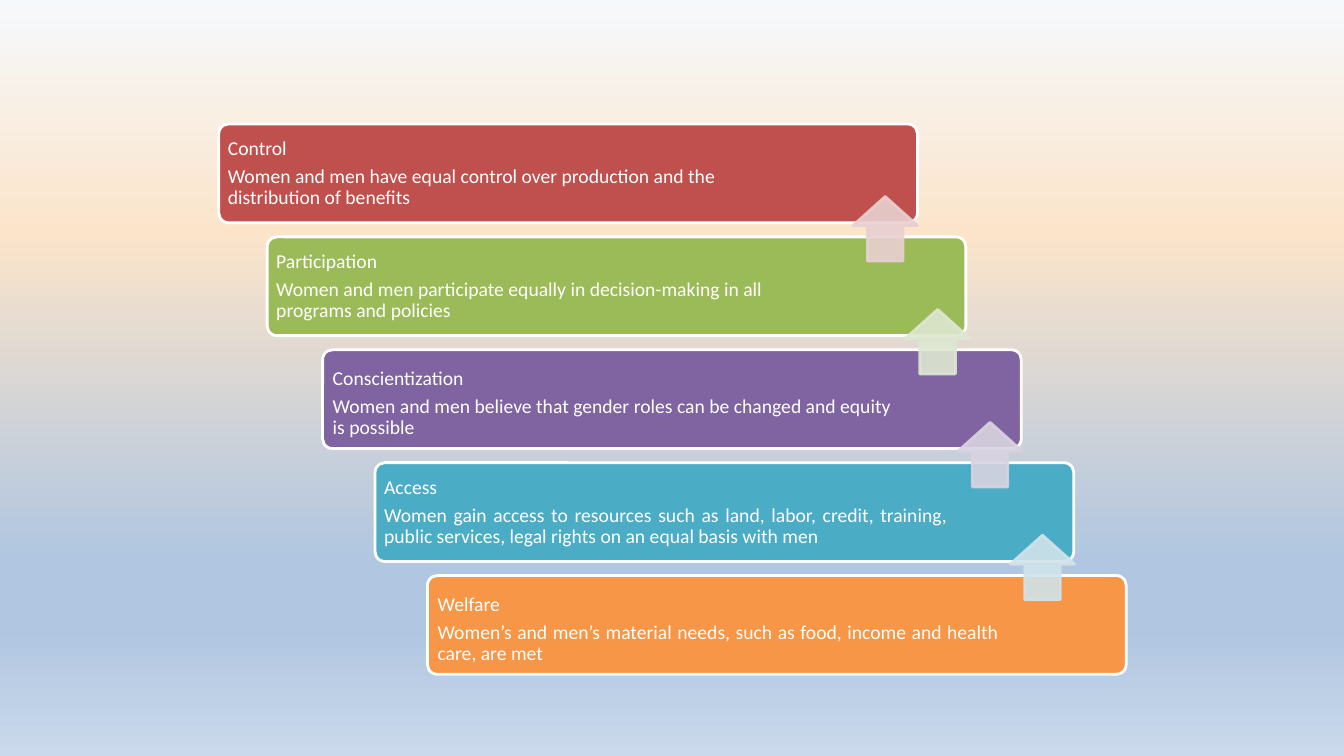
from lxml import etree
from pptx import Presentation
from pptx.dml.color import RGBColor
from pptx.enum.shapes import MSO_SHAPE
from pptx.enum.text import MSO_ANCHOR, PP_ALIGN
from pptx.oxml.ns import qn
from pptx.util import Inches, Pt

ROUNDED = MSO_SHAPE.ROUNDED_RECTANGLE
UP_ARROW = MSO_SHAPE.UP_ARROW
MIDDLE = MSO_ANCHOR.MIDDLE
LEFT, JUSTIFY = PP_ALIGN.LEFT, PP_ALIGN.JUSTIFY

COLORS = {
    "white": "FFFFFF",
    "red": "C0504D", "green": "9BBB59", "purple": "8064A2",
    "teal": "4BACC6", "orange": "F79646",
    "pale red": "E8D0D0", "pale green": "DEE7D1",
    "pale purple": "D8D3E0", "pale teal": "D0E3EA",
}
BACKGROUND_STOPS = [(0, "F6F9FC"), (31, "FBE4CA"), (74, "B0C6E1"),
                    (83, "B0C6E1"), (100, "CAD9EB")]

# left edge, color, alignment, inset, downward shift of the text, heading, description
LEVELS = [
    (2.17, "red", LEFT, 0.06, 0, "Control",
     "Women and men have equal control over production and the distribution of benefits"),
    (2.65, "green", LEFT, 0.06, 0, "Participation",
     "Women and men participate equally in decision-making in all programs and policies"),
    (3.2, "purple", LEFT, 0.07, 0.04, "Conscientization",
     "Women and men believe that gender roles can be changed and equity is possible"),
    (3.72, "teal", JUSTIFY, 0.06, 0, "Access",
     "Women gain access to resources such as land, labor, credit, training, "
     "public services, legal rights on an equal basis with men"),
    (4.24, "orange", JUSTIFY, 0.07, 0.04, "Welfare",
     "Women’s and men’s material needs, such as food, income and health care, are met"),
]
ARROW_COLORS = ["pale red", "pale green", "pale purple", "pale teal"]

FIRST_TOP, ROW_STEP = 1.23, 1.12
BAND_WIDTH, BAND_HEIGHT = 6.93, 0.98
TEXT_WIDTH, TEXT_HEIGHT, TEXT_OFFSET = 5.71, 0.93, 0.03
ARROW_LEFT, ARROW_TOP, ARROW_STEP, ARROW_SIZE = 8.46, 1.95, 0.52, 0.64


def rgb(name):
    return RGBColor.from_string(COLORS[name])


def paint_background(page):
    """Fill the page with a top-to-bottom gradient of several stops."""
    fill = page.background.fill
    fill.gradient()
    fill.gradient_angle = 270
    stops = page.element.find(".//" + qn("a:gsLst"))
    for stop in list(stops):
        stops.remove(stop)
    for percent, color in BACKGROUND_STOPS:
        stop = etree.SubElement(stops, qn("a:gs"), pos=str(percent * 1000))
        etree.SubElement(stop, qn("a:srgbClr"), val=color)


def add_filled_shape(page, kind, left, top, width, height, fill, line, adjustments):
    shape = page.shapes.add_shape(kind, Inches(left), Inches(top),
                                  Inches(width), Inches(height))
    shape.shadow.inherit = False
    shape.fill.solid()
    shape.fill.fore_color.rgb = rgb(fill)
    shape.line.color.rgb = rgb(line)
    shape.line.width = Pt(2)
    for index, value in enumerate(adjustments):
        shape.adjustments[index] = value
    return shape


def set_opacity(shape, percent):
    for color in shape.element.spPr.iter(qn("a:srgbClr")):
        etree.SubElement(color, qn("a:alpha"), val=str(percent * 1000))


def add_level_text(page, left, top, alignment, inset, shift, lines):
    box = page.shapes.add_textbox(Inches(left), Inches(top),
                                  Inches(TEXT_WIDTH), Inches(TEXT_HEIGHT))
    frame = box.text_frame
    frame.word_wrap = True
    frame.vertical_anchor = MIDDLE
    frame.margin_left = frame.margin_right = frame.margin_bottom = Inches(inset)
    frame.margin_top = Inches(inset + 2 * shift)
    frame.text = "\n".join(lines)
    for para in frame.paragraphs:
        para.alignment = alignment
        para.line_spacing = 0.9
        para.space_after = Pt(5)
        para.font.name = "Calibri"
        para.font.size = Pt(14)
        para.font.color.rgb = rgb("white")


def main():
    deck = Presentation()
    deck.slide_width, deck.slide_height = Inches(13.33), Inches(7.5)
    page = deck.slides.add_slide(deck.slide_layouts[6])
    paint_background(page)

    for row, (left, color, alignment, inset, shift, *lines) in enumerate(LEVELS):
        top = FIRST_TOP + row * ROW_STEP
        add_filled_shape(page, ROUNDED, left, top, BAND_WIDTH, BAND_HEIGHT,
                         color, "white", [0.1])
        add_level_text(page, left + TEXT_OFFSET, top + TEXT_OFFSET,
                       alignment, inset, shift, lines)

    for row, color in enumerate(ARROW_COLORS):
        arrow = add_filled_shape(page, UP_ARROW, ARROW_LEFT + row * ARROW_STEP,
                                 ARROW_TOP + row * ROW_STEP, ARROW_SIZE, ARROW_SIZE,
                                 color, color, [0.55, 0.45])
        set_opacity(arrow, 90)

    deck.save("out.pptx")


if __name__ == "__main__":
    main()
